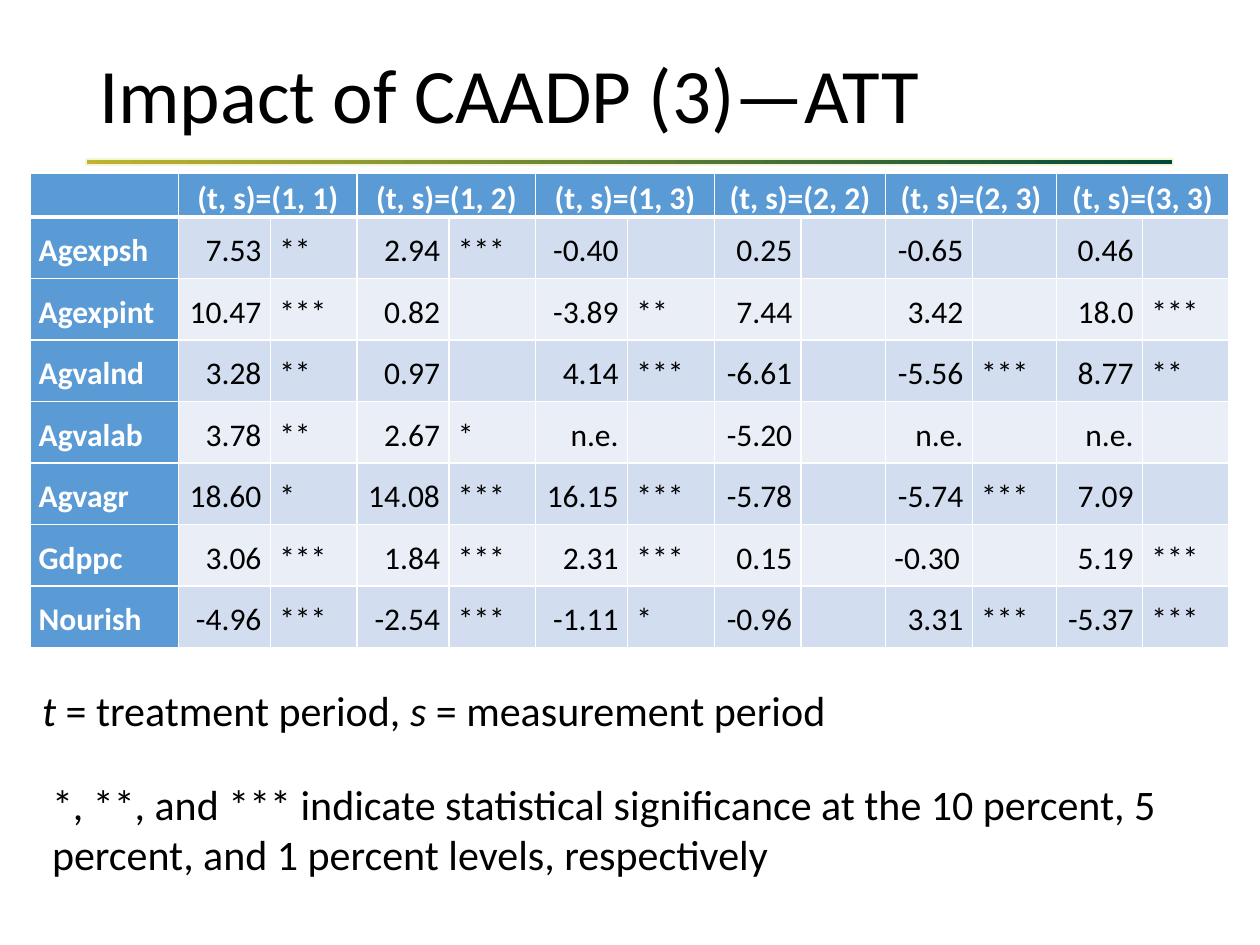
"""Build the slide with the table of CAADP treatment effects."""
from lxml.etree import SubElement
from pptx import Presentation
from pptx.dml.color import RGBColor
from pptx.enum.shapes import MSO_SHAPE
from pptx.enum.text import MSO_ANCHOR as Anchor, MSO_AUTO_SIZE as AutoSize, PP_ALIGN as Align
from pptx.oxml.ns import qn
from pptx.util import Cm, Pt

COLORS = {
    "text": "000000", "white": "FFFFFF", "header": "5B9BD5",
    "odd": "D2DEEF", "even": "EAEFF7",
    "gold": "C0B430", "green": "00493A", "rule_edge": "F2F5D8",
}
FONT = "Calibri"
TITLE = [("Impact of CAADP (3)—ATT", False)]
PERIOD_NOTE = [("t", True), (" = treatment period, ", False),
               ("s", True), (" = measurement period", False)]
STARS_NOTE = [("*, **, and *** indicate statistical significance at the 10 percent, "
               "5 percent, and 1 percent levels, respectively", False)]
PERIODS = [(1, 1), (1, 2), (1, 3), (2, 2), (2, 3), (3, 3)]
EFFECTS = {
    "Agexpsh": ["7.53 **", "2.94 ***", "-0.40", "0.25", "-0.65", "0.46"],
    "Agexpint": ["10.47 ***", "0.82", "-3.89 **", "7.44", "3.42", "18.0 ***"],
    "Agvalnd": ["3.28 **", "0.97", "4.14 ***", "-6.61", "-5.56 ***", "8.77 **"],
    "Agvalab": ["3.78 **", "2.67 *", "n.e.", "-5.20", "n.e.", "n.e."],
    "Agvagr": ["18.60 *", "14.08 ***", "16.15 ***", "-5.78", "-5.74 ***", "7.09"],
    "Gdppc": ["3.06 ***", "1.84 ***", "2.31 ***", "0.15", "-0.30", "5.19 ***"],
    "Nourish": ["-4.96 ***", "-2.54 ***", "-1.11 *", "-0.96", "3.31 ***", "-5.37 ***"],
}
LEFT_ALIGNED = {("Gdppc", "-0.30")}
COLUMN_WIDTHS = [3] + [1.85, 1.75] * 3 + [1.75, 1.7] * 2 + [1.73, 1.73]
HEADER_HEIGHT, ROW_HEIGHT = 0.85, 1.24


def color(name):
    return RGBColor.from_string(COLORS[name])


def style(run, size, name, bold=False, italic=False):
    font = run.font
    font.name, font.size, font.bold, font.italic = FONT, Pt(size), bold, italic
    font.color.rgb = color(name)


def add_text(slide, place, pieces, size, wrap=True):
    frame = slide.shapes.add_textbox(*map(Cm, place)).text_frame
    frame.word_wrap = wrap
    for text, italic in pieces:
        run = frame.paragraphs[0].add_run()
        run.text = text
        style(run, size, "text", italic=italic)
    return frame


def set_borders(cell, top, bottom):
    properties = cell._tc.get_or_add_tcPr()
    widths = {"a:lnL": 1, "a:lnR": 1, "a:lnT": top, "a:lnB": bottom}
    for position, (tag, width) in enumerate(widths.items()):
        line = SubElement(properties, qn(tag), w=str(Pt(width)))
        solid = SubElement(line, qn("a:solidFill"))
        SubElement(solid, qn("a:srgbClr"), val=COLORS["white"])
        properties.insert(position, line)


def fill_cell(cell, text, fill, align, is_label, anchor=Anchor.MIDDLE):
    cell.margin_left = cell.margin_right = Cm(0.18)
    cell.margin_top = cell.margin_bottom = 0
    cell.vertical_anchor = anchor
    cell.fill.solid()
    cell.fill.fore_color.rgb = color(fill)
    cell.text_frame.text = text
    paragraph = cell.text_frame.paragraphs[0]
    paragraph.alignment, paragraph.line_spacing = align, 1.15
    for run in paragraph.runs:
        style(run, 18, "white" if is_label else "text", bold=is_label)


def add_effects(slide):
    height = HEADER_HEIGHT + ROW_HEIGHT * len(EFFECTS)
    table = slide.shapes.add_table(
        len(EFFECTS) + 1, len(COLUMN_WIDTHS),
        Cm(0.6), Cm(3.5), Cm(sum(COLUMN_WIDTHS)), Cm(height)).table
    for column, width in zip(table.columns, COLUMN_WIDTHS):
        column.width = Cm(width)
    for index, row in enumerate(table.rows):
        row.height = Cm(ROW_HEIGHT if index else HEADER_HEIGHT)

    headings = [""]
    for t, s in PERIODS:
        headings += [f"(t, s)=({t}, {s})", ""]
    for index, heading in enumerate(headings):
        fill_cell(table.cell(0, index), heading, "header", Align.CENTER, True, Anchor.TOP)
        set_borders(table.cell(0, index), 1, 3)
    for index in range(1, len(headings), 2):
        table.cell(0, index).merge(table.cell(0, index + 1))

    for r, (indicator, effects) in enumerate(EFFECTS.items(), 1):
        band = "odd" if r % 2 else "even"
        fill_cell(table.cell(r, 0), indicator, "header", Align.LEFT, True)
        for period, effect in enumerate(effects):
            value, _, stars = effect.partition(" ")
            align = Align.LEFT if (indicator, value) in LEFT_ALIGNED else Align.RIGHT
            fill_cell(table.cell(r, 2 * period + 1), value, band, align, False)
            fill_cell(table.cell(r, 2 * period + 2), stars, band, Align.LEFT, False)
        for index in range(len(headings)):
            set_borders(table.cell(r, index), 3 if r == 1 else 1, 1)


def add_rule(slide):
    rule = slide.shapes.add_shape(
        MSO_SHAPE.RECTANGLE, Cm(1.73), Cm(3.2), Cm(21.92), Cm(0.13))
    rule.shadow.inherit = False
    rule.fill.gradient()
    rule.fill.gradient_angle = 0
    for stop, name in zip(rule.fill.gradient_stops, ("gold", "green")):
        stop.color.rgb = color(name)
    rule.line.color.rgb = color("rule_edge")
    rule.line.width = Pt(1)


def main():
    deck = Presentation()
    deck.slide_width, deck.slide_height = Cm(25.4), Cm(19.05)
    slide = deck.slides.add_slide(deck.slide_layouts[6])
    add_rule(slide)
    title = add_text(slide, (1.75, 0.94, 21.9, 2.08), TITLE, 44)
    title.vertical_anchor = Anchor.MIDDLE
    title.paragraphs[0].line_spacing = 0.9
    add_effects(slide)
    period_note = add_text(slide, (0.6, 13.67, 16.46, 1.28), PERIOD_NOTE, 24, wrap=False)
    stars_note = add_text(slide, (0.8, 15.57, 23.93, 2.31), STARS_NOTE, 24)
    for note in (period_note, stars_note):
        note.auto_size = AutoSize.SHAPE_TO_FIT_TEXT
    deck.save("out.pptx")


if __name__ == "__main__":
    main()
